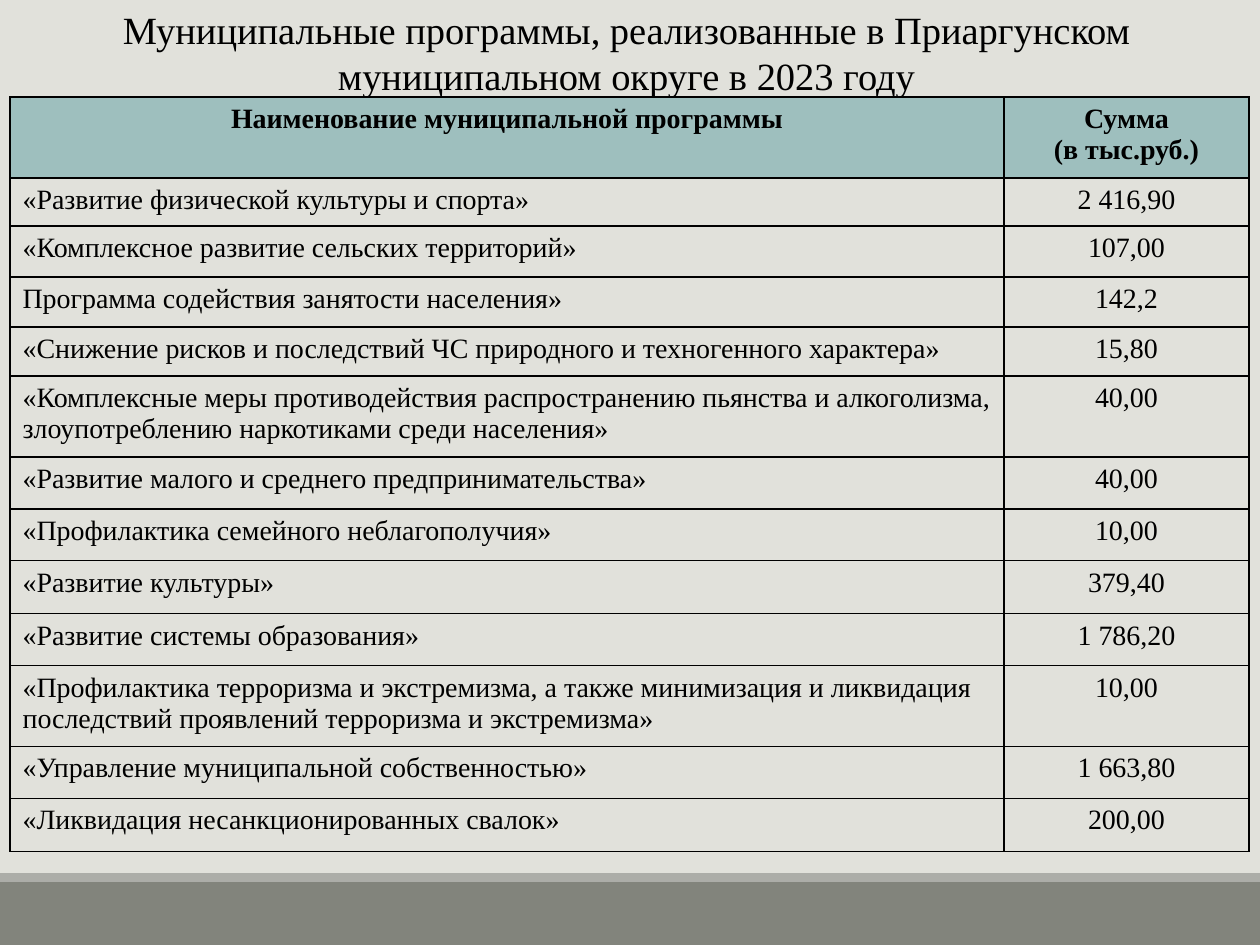
from lxml import etree
from pptx import Presentation
from pptx.dml.color import RGBColor
from pptx.enum.shapes import MSO_SHAPE
from pptx.enum.text import MSO_ANCHOR, MSO_AUTO_SIZE, PP_ALIGN
from pptx.oxml.ns import qn
from pptx.util import Emu, Pt

RECTANGLE = MSO_SHAPE.RECTANGLE
TOP = MSO_ANCHOR.TOP
NO_AUTOFIT = MSO_AUTO_SIZE.NONE
LEFT, CENTER = PP_ALIGN.LEFT, PP_ALIGN.CENTER

FONT = "Times New Roman"
BLACK = "000000"
BACKGROUND = "E1E1DB"
HEADER_FILL = "9EBFBE"
BORDER_WIDTH = Pt(1)

TITLE = "Муниципальные программы, реализованные в Приаргунском муниципальном округе в 2023 году"
HEADER = ("Наименование муниципальной программы", "Сумма\n(в тыс.руб.)", 81)
PROGRAMS = [
    ("«Развитие физической культуры и спорта»", "2 416,90", 48),
    ("«Комплексное развитие сельских территорий»", "107,00", 51),
    ("Программа содействия занятости населения»", "142,2", 50),
    ("«Снижение рисков и последствий ЧС природного и техногенного характера»", "15,80", 49),
    ("«Комплексные меры противодействия распространению пьянства и алкоголизма, "
     "злоупотреблению наркотиками среди населения»", "40,00", 81),
    ("«Развитие малого и среднего предпринимательства»", "40,00", 52),
    ("«Профилактика семейного неблагополучия»", "10,00", 52),
    ("«Развитие культуры»", "379,40", 53),
    ("«Развитие системы образования»", "1 786,20", 52),
    ("«Профилактика терроризма и экстремизма, а также минимизация и ликвидация "
     "последствий проявлений терроризма и экстремизма»", "10,00", 81),
    ("«Управление муниципальной собственностью»", "1 663,80", 52),
    ("«Ликвидация несанкционированных свалок»", "200,00", 53),
]
ROWS = [HEADER] + PROGRAMS
COLUMN_WIDTHS = [994, 245]
FOOTER_BANDS = [(882, 63, "82847C"), (873, 9, "ACADA8")]


def px(value):
    return Emu(round(value * 914400 / 126))


def color(value):
    return RGBColor.from_string(value)


def write(frame, text, size, align, bold=False):
    para = frame.paragraphs[0]
    para.alignment = align
    for index, line in enumerate(text.split("\n")):
        if index:
            para.add_line_break()
        span = para.add_run()
        span.text = line
        span.font.name = FONT
        span.font.size = Pt(size)
        span.font.bold = bold
        span.font.color.rgb = color(BLACK)


def add_borders(cell):
    properties = cell._tc.get_or_add_tcPr()
    for index, side in enumerate(("a:lnL", "a:lnR", "a:lnT", "a:lnB")):
        line = etree.Element(qn(side), w=str(BORDER_WIDTH))
        fill = etree.SubElement(line, qn("a:solidFill"))
        etree.SubElement(fill, qn("a:srgbClr"), val=BLACK)
        properties.insert(index, line)


def add_footer(page):
    for top, height, fill in FOOTER_BANDS:
        band = page.shapes.add_shape(RECTANGLE, 0, px(top), px(1260), px(height))
        band.shadow.inherit = False
        band.fill.solid()
        band.fill.fore_color.rgb = color(fill)
        band.line.fill.background()


def add_title(page):
    title = page.shapes.title
    title.left, title.top, title.width, title.height = px(4), px(0), px(1245), px(106)
    frame = title.text_frame
    frame.word_wrap = True
    frame.auto_size = NO_AUTOFIT
    frame.vertical_anchor = TOP
    write(frame, TITLE, 22, CENTER)


def add_programs(page):
    heights = [row[2] for row in ROWS]
    table = page.shapes.add_table(
        len(ROWS), len(COLUMN_WIDTHS), px(10), px(97), px(sum(COLUMN_WIDTHS)), px(sum(heights))
    ).table
    for column, width in zip(table.columns, COLUMN_WIDTHS):
        column.width = px(width)
    for row_index, (name, amount, height) in enumerate(ROWS):
        table.rows[row_index].height = px(height)
        is_header = row_index == 0
        for column_index, text in enumerate((name, amount)):
            cell = table.cell(row_index, column_index)
            cell.fill.solid()
            cell.fill.fore_color.rgb = color(HEADER_FILL if is_header else BACKGROUND)
            add_borders(cell)
            align = CENTER if is_header or column_index else LEFT
            write(cell.text_frame, text, 16, align, is_header)


def main():
    deck = Presentation()
    deck.slide_width, deck.slide_height = px(1260), px(945)
    page = deck.slides.add_slide(deck.slide_layouts[5])
    page.background.fill.solid()
    page.background.fill.fore_color.rgb = color(BACKGROUND)
    add_footer(page)
    add_title(page)
    add_programs(page)
    deck.save("out.pptx")


if __name__ == "__main__":
    main()
